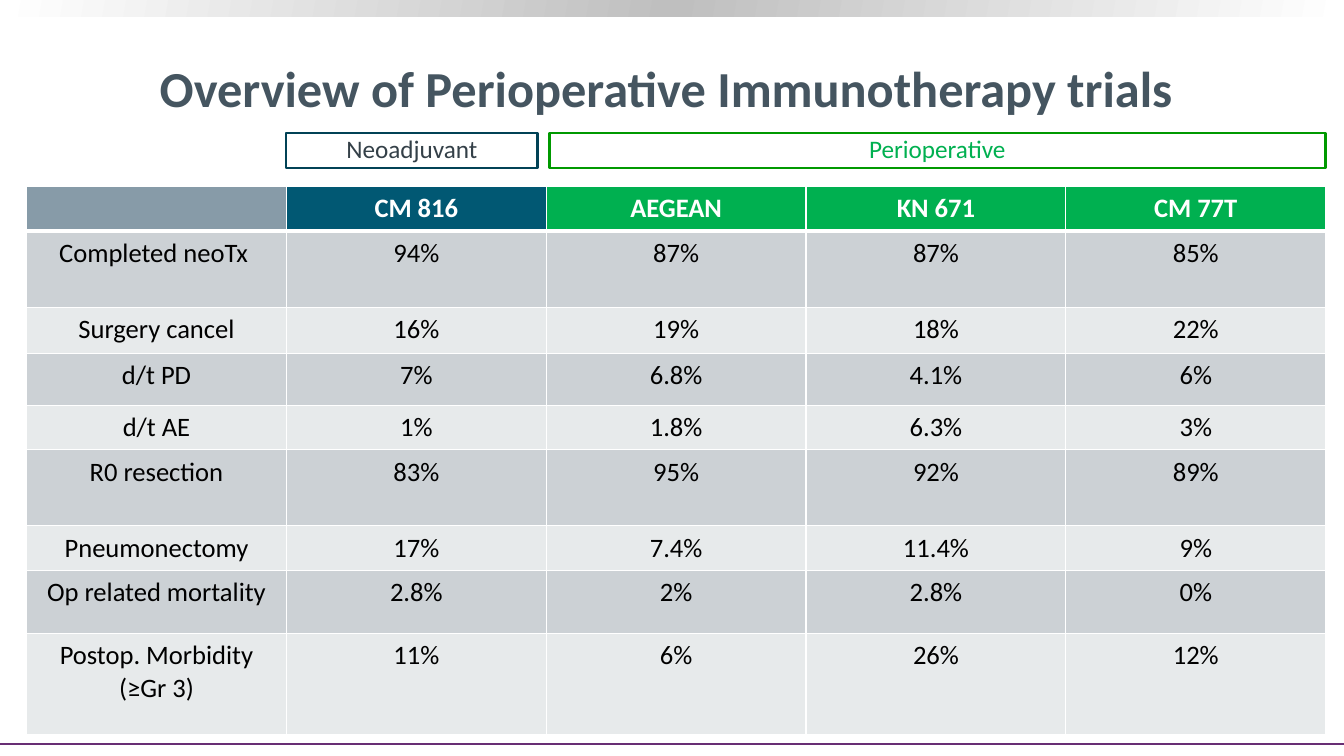
from copy import deepcopy
from dataclasses import dataclass

from lxml.etree import SubElement
from pptx import Presentation
from pptx.dml.color import RGBColor
from pptx.enum.shapes import MSO_CONNECTOR, MSO_SHAPE
from pptx.enum.text import MSO_ANCHOR, PP_ALIGN
from pptx.oxml.ns import qn
from pptx.util import Pt


@dataclass(frozen=True)
class Theme:
    font: str = "Calibri"
    title_size: float = 36
    label_size: float = 18
    cell_size: float = 19
    white: str = "FFFFFF"
    black: str = "000000"
    title: str = "455560"
    silver: str = "BFBFBF"
    purple: str = "682E74"
    corner: str = "879BA8"
    navy: str = "015873"
    navy_line: str = "014256"
    slate: str = "344048"
    green: str = "00B050"
    green_line: str = "009900"
    bands: tuple = ("CCD1D5", "E7EAEB")


PAGE_WIDTH, PAGE_HEIGHT = 960, 540
TABLE_LEFT, TABLE_TOP, COLUMN_WIDTH = 19, 133.4, 185.6
ROW_HEIGHTS = (31, 54.6, 33, 37.4, 31.5, 54.3, 31.8, 45.2, 72)
ROWS = (
    ("", "CM 816", "AEGEAN", "KN 671", "CM 77T"),
    ("Completed neoTx ", "94%", "87%", "87%", "85%"),
    ("Surgery cancel", "16%", "19%", "18%", "22%"),
    ("d/t PD", "7%", "6.8%", "4.1%", "6%"),
    ("d/t AE", "1%", "1.8%", "6.3%", "3%"),
    ("R0 resection", "83%", "95%", "92%", "89%"),
    ("Pneumonectomy", "17%", "7.4%", "11.4%", "9%"),
    ("Op related mortality", "2.8%", "2%", "2.8%", "0%"),
    ("Postop. Morbidity\n(≥Gr 3)", "11%", "6%", "26%", "12%"),
)


class SlideBuilder:
    def __init__(self, page, theme):
        self.page = page
        self.theme = theme

    def add_text(self, frame, text, size, color, bold=False):
        """Fill a text frame with one centred paragraph per line of text."""
        frame.word_wrap = True
        for index, line in enumerate(text.split("\n")):
            para = frame.add_paragraph() if index else frame.paragraphs[0]
            para.alignment = PP_ALIGN.CENTER
            span = para.add_run()
            span.text = line
            span.font.name = self.theme.font
            span.font.size = Pt(size)
            span.font.bold = bold
            span.font.color.rgb = RGBColor.from_string(color)

    def rectangle(self, left, top, width, height):
        box = self.page.shapes.add_shape(
            MSO_SHAPE.RECTANGLE, Pt(left), Pt(top), Pt(width), Pt(height))
        box.shadow.inherit = False
        return box

    def gradient_band(self, height):
        band = self.rectangle(0, 0, PAGE_WIDTH, height)
        band.line.fill.background()
        band.fill.gradient()
        band.fill.gradient_angle = 170
        start, middle = band.fill.gradient_stops
        start.color.rgb = RGBColor.from_string(self.theme.white)
        middle.color.rgb = RGBColor.from_string(self.theme.silver)
        middle.position = 0.5
        stops = band._element.spPr.find(qn("a:gradFill")).find(qn("a:gsLst"))
        end = deepcopy(stops[0])
        end.set("pos", "100000")
        stops.append(end)

    def rule(self, y, color, width):
        line = self.page.shapes.add_connector(
            MSO_CONNECTOR.STRAIGHT, Pt(0), Pt(y), Pt(PAGE_WIDTH), Pt(y))
        line.line.color.rgb = RGBColor.from_string(color)
        line.line.width = Pt(width)
        SubElement(line._element.spPr, qn("a:effectLst"))

    def title(self, text, left, top, width, height):
        box = self.page.shapes.add_textbox(Pt(left), Pt(top), Pt(width), Pt(height))
        box.text_frame.vertical_anchor = MSO_ANCHOR.MIDDLE
        self.add_text(box.text_frame, text, self.theme.title_size, self.theme.title, True)

    def label(self, text, left, width, outline, color):
        box = self.rectangle(left, 95, width, 25.2)
        box.fill.background()
        box.line.color.rgb = RGBColor.from_string(outline)
        box.line.width = Pt(1.75)
        box.text_frame.vertical_anchor = MSO_ANCHOR.BOTTOM
        self.add_text(box.text_frame, text, self.theme.label_size, color)

    def borders(self, cell, **widths):
        """Draw white cell edges; keys are the a:tcPr line names, in schema order."""
        properties = cell._tc.get_or_add_tcPr()
        for index, (edge, width) in enumerate(widths.items()):
            line = properties.makeelement(qn(f"a:{edge}"), {"w": str(Pt(width))})
            fill = SubElement(line, qn("a:solidFill"))
            SubElement(fill, qn("a:srgbClr"), val=self.theme.white)
            properties.insert(index, line)

    def table(self, rows, heights):
        theme = self.theme
        header_fills = (theme.corner, theme.navy) + (theme.green,) * 3
        columns = len(rows[0])
        table = self.page.shapes.add_table(
            len(rows), columns, Pt(TABLE_LEFT), Pt(TABLE_TOP),
            Pt(COLUMN_WIDTH * columns), Pt(sum(heights))).table
        for column in table.columns:
            column.width = Pt(COLUMN_WIDTH)
        for r, (values, height) in enumerate(zip(rows, heights)):
            table.rows[r].height = Pt(height)
            header = r == 0
            for c, value in enumerate(values):
                cell = table.cell(r, c)
                cell.margin_left = cell.margin_right = Pt(8.64)
                cell.margin_top = cell.margin_bottom = Pt(4.32)
                cell.fill.solid()
                cell.fill.fore_color.rgb = RGBColor.from_string(
                    header_fills[c] if header else theme.bands[(r - 1) % 2])
                self.borders(cell, lnL=1, lnR=1, lnT=3 if r == 1 else 1,
                             lnB=3 if header else 1)
                if value:
                    self.add_text(cell.text_frame, value, theme.cell_size,
                                  theme.white if header else theme.black, header)


def main():
    deck = Presentation()
    deck.slide_width, deck.slide_height = Pt(PAGE_WIDTH), Pt(PAGE_HEIGHT)
    theme = Theme()
    builder = SlideBuilder(deck.slides.add_slide(deck.slide_layouts[6]), theme)
    builder.rule(531.4, theme.purple, 1.5)
    builder.gradient_band(11.5)
    builder.title("Overview of Perioperative Immunotherapy trials", 48, 19, 856, 87)
    builder.table(ROWS, ROW_HEIGHTS)
    builder.label("Neoadjuvant", 204.5, 179.5, theme.navy_line, theme.slate)
    builder.label("Perioperative", 392.4, 554.4, theme.green_line, theme.green)
    deck.save("out.pptx")


if __name__ == "__main__":
    main()
